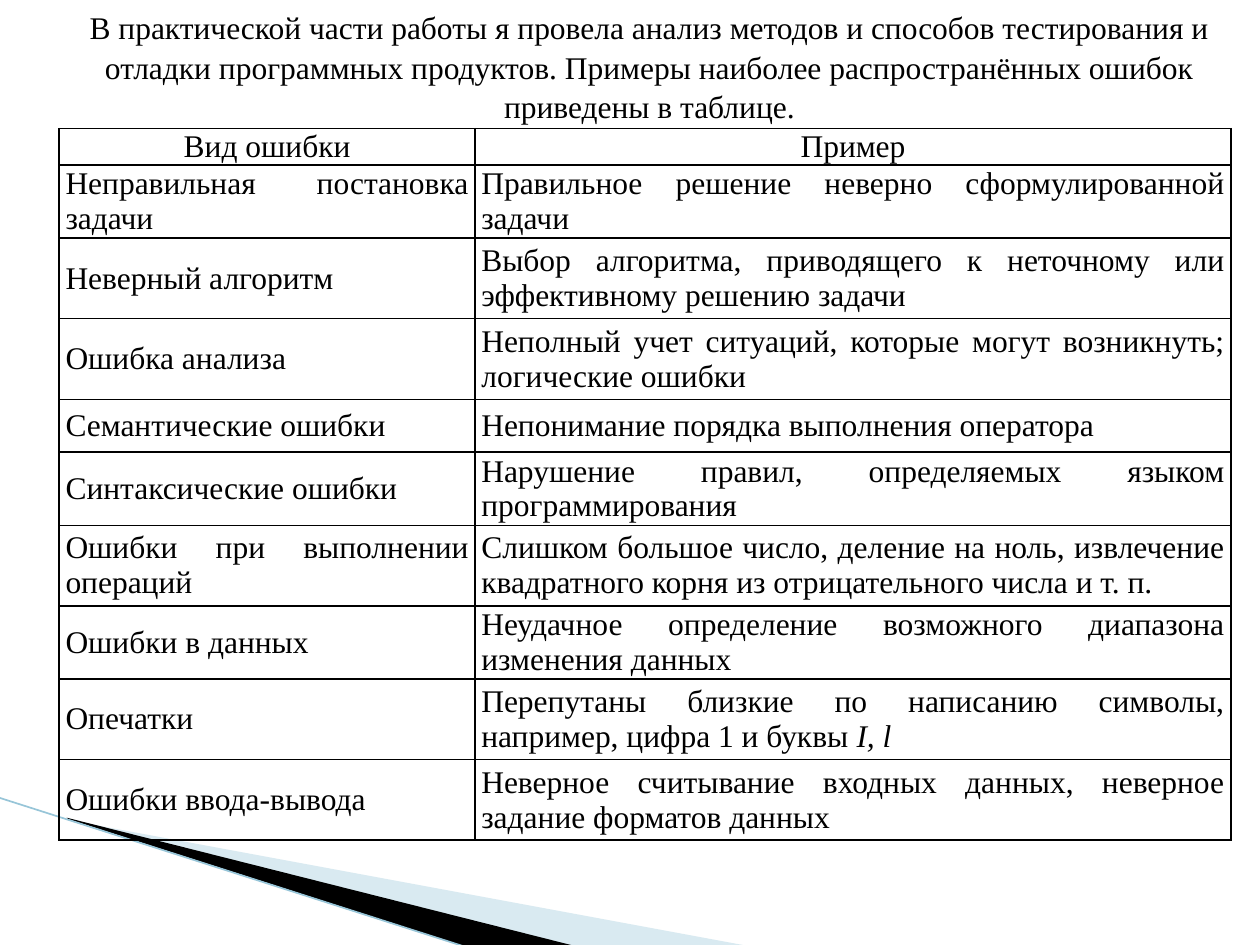
from dataclasses import dataclass

from lxml import etree
from pptx import Presentation
from pptx.dml.color import RGBColor
from pptx.enum.shapes import MSO_CONNECTOR
from pptx.enum.text import MSO_ANCHOR, MSO_AUTO_SIZE, PP_ALIGN
from pptx.oxml.ns import qn
from pptx.util import Inches, Pt

STRAIGHT = MSO_CONNECTOR.STRAIGHT
MIDDLE = MSO_ANCHOR.MIDDLE
FIT_SHAPE = MSO_AUTO_SIZE.SHAPE_TO_FIT_TEXT
CENTER, JUSTIFY = PP_ALIGN.CENTER, PP_ALIGN.JUSTIFY

INTRO = (
    "В практической части работы я провела анализ методов и способов тестирования "
    "и отладки программных продуктов. Примеры наиболее распространённых ошибок "
    "приведены в таблице."
)
HEADER = ("Вид ошибки", "Пример")
ERRORS = [
    ("Неправильная постановка задачи", "Правильное решение неверно сформулированной задачи"),
    ("Неверный алгоритм", "Выбор алгоритма, приводящего к неточному или эффективному решению задачи"),
    ("Ошибка анализа", "Неполный учет ситуаций, которые могут возникнуть; логические ошибки"),
    ("Семантические ошибки", "Непонимание порядка выполнения оператора"),
    ("Синтаксические ошибки", "Нарушение правил, определяемых языком программирования"),
    ("Ошибки при выполнении операций",
     "Слишком большое число, деление на ноль, извлечение квадратного корня "
     "из отрицательного числа и т. п."),
    ("Ошибки в данных", "Неудачное определение возможного диапазона изменения данных"),
    ("Опечатки",
     ("Перепутаны близкие по написанию символы, например, цифра 1 и буквы ", "I, l")),
    ("Ошибки ввода-вывода", "Неверное считывание входных данных, неверное задание форматов данных"),
]
COLUMN_WIDTHS = (33, 60)
ROW_HEIGHTS = (2.9, 5.8, 6.4, 6.4, 4.2, 5.8, 6.4, 5.8, 6.4, 6.4)


@dataclass(frozen=True)
class Theme:
    """Colours, font, type size and line widths of the slide."""

    font: str = "Times New Roman"
    size: float = 18
    ink: str = "000000"
    pale: str = "A0CBDC"
    edge: str = "97C5D8"
    edge_width: float = 0.95
    border_width: float = 1
    intro_spacing: float = 1.05


def grid(steps):
    """Convert grid steps, a hundred across and seventy-five down, to a length."""
    return Inches(steps / 10)


def write(frame, text, theme, align=JUSTIFY, spacing=None):
    """Fill a frame with one paragraph; the second part of a pair is italic."""
    paragraph = frame.paragraphs[0]
    paragraph.alignment = align
    paragraph.line_spacing = spacing
    parts = (text,) if isinstance(text, str) else text
    for index, part in enumerate(parts):
        run = paragraph.add_run()
        run.text = part
        run.font.name = theme.font
        run.font.size = Pt(theme.size)
        run.font.italic = index > 0
        run.font.color.rgb = RGBColor.from_string(theme.ink)


class SlideBuilder:
    """Draws styled elements on the current slide."""

    def __init__(self, slide, theme):
        """Keep the slide and its theme."""
        self.shapes = slide.shapes
        self.theme = theme

    def wedge(self, corners, color, opacity=100):
        """Draw a closed outline without a border."""
        start, *others = [(grid(x), grid(y)) for x, y in corners]
        outline = self.shapes.build_freeform(*start)
        outline.add_line_segments(others, close=True)
        wedge = outline.convert_to_shape()
        wedge.shadow.inherit = False
        wedge.line.fill.background()
        wedge.fill.solid()
        wedge.fill.fore_color.rgb = RGBColor.from_string(color)
        if opacity < 100:
            tone = wedge.fill._xPr.find(".//" + qn("a:srgbClr"))
            etree.SubElement(tone, qn("a:alpha"), val=str(opacity * 1000))

    def edge(self, start, end):
        """Draw a thin straight line."""
        edge = self.shapes.add_connector(STRAIGHT, *map(grid, (*start, *end)))
        edge.line.color.rgb = RGBColor.from_string(self.theme.edge)
        edge.line.width = Pt(self.theme.edge_width)
        etree.SubElement(edge.line._ln.getparent(), qn("a:effectLst"))

    def border(self, cell):
        """Give a cell a line on all four sides."""
        properties = cell._tc.get_or_add_tcPr()
        for index, side in enumerate(("a:lnL", "a:lnR", "a:lnT", "a:lnB")):
            line = etree.Element(qn(side), w=str(Pt(self.theme.border_width)))
            fill = etree.SubElement(line, qn("a:solidFill"))
            etree.SubElement(fill, qn("a:srgbClr"), val=self.theme.ink)
            properties.insert(index, line)

    def table(self, left, top, rows, widths, heights):
        """Draw a bordered table with a centred first row."""
        box = map(grid, (left, top, sum(widths), sum(heights)))
        table = self.shapes.add_table(len(rows), len(widths), *box).table
        table.first_row = table.horz_banding = False
        for column, width in zip(table.columns, widths):
            column.width = grid(width)
        for index, (row, height, texts) in enumerate(zip(table.rows, heights, rows)):
            row.height = grid(height)
            for cell, text in zip(row.cells, texts):
                cell.fill.background()
                cell.vertical_anchor = MIDDLE
                cell.margin_left = cell.margin_right = grid(0.5)
                cell.margin_top = cell.margin_bottom = 0
                write(cell.text_frame, text, self.theme, align=JUSTIFY if index else CENTER)
                self.border(cell)

    def intro(self, left, top, width, height, text):
        """Draw a centred paragraph in a text box."""
        frame = self.shapes.add_textbox(*map(grid, (left, top, width, height))).text_frame
        frame.word_wrap = True
        frame.auto_size = FIT_SHAPE
        write(frame, text, self.theme, align=CENTER, spacing=self.theme.intro_spacing)


def main():
    """Build and save the slide."""
    presentation = Presentation()
    presentation.slide_width, presentation.slide_height = grid(100), grid(75)
    theme = Theme()
    builder = SlideBuilder(presentation.slides.add_slide(presentation.slide_layouts[6]), theme)
    builder.wedge([(5.5, 65.1), (59.5, 75.1), (45.6, 75.1), (5.5, 65)], theme.pale, opacity=40)
    builder.wedge([(5.3, 64.9), (45.7, 75.1), (37.2, 75.2), (5.4, 65)], theme.ink)
    builder.edge((-0.1, 63.3), (37.1, 75.2))
    builder.table(4.7, 10.2, [HEADER, *ERRORS], COLUMN_WIDTHS, ROW_HEIGHTS)
    builder.intro(3.1, 0, 96.9, 10.1, INTRO)
    presentation.save("out.pptx")


if __name__ == "__main__":
    main()
